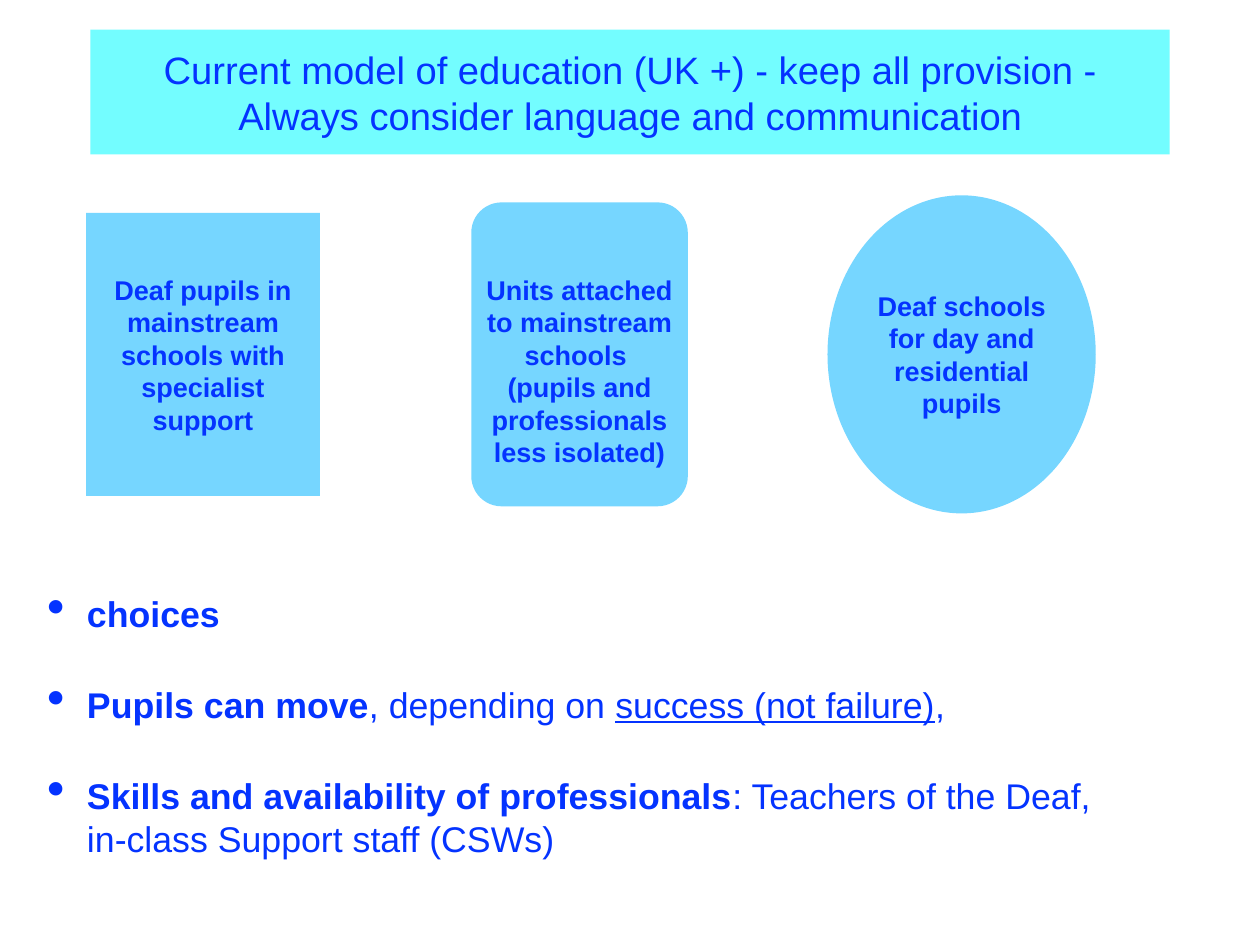
from lxml import etree
from pptx import Presentation
from pptx.dml.color import RGBColor
from pptx.enum.shapes import MSO_SHAPE as Shape
from pptx.enum.text import MSO_ANCHOR as Anchor, PP_ALIGN as Align
from pptx.oxml.ns import qn
from pptx.util import Pt

COLORS = {"text": "0433FF", "banner": "73FDFF", "school": "76D6FF"}
FONT = "Arial"
INSET = 4.3

TITLE = ["Current model of education (UK +) - keep all provision -",
         "Always consider language and communication"]

# Shape, left, width, height, extra space above the text, paragraphs
SCHOOLS = [
    (Shape.RECTANGLE, 70, 190, 230, 0,
     ["Deaf pupils in mainstream schools with specialist support"]),
    (Shape.ROUNDED_RECTANGLE, 383, 176, 247, 26.4,
     ["Units attached to mainstream schools ",
      "(pupils and professionals less isolated)"]),
    (Shape.OVAL, 672.5, 218, 258.5, 0,
     ["Deaf schools for day and residential pupils"]),
]
SCHOOL_MIDDLE = 288

# Each point is a list of (text, style)
POINTS = [
    [("choices", "bold")],
    [("Pupils can move", "bold"), (", depending on ", "plain"),
     ("success (not failure)", "underline"), (",", "plain")],
    [("Skills and availability of professionals", "bold"),
     (": Teachers of the Deaf, in-class Support staff (CSWs)", "plain")],
]
POINT_INDENT = 32.4


def color(name):
    return RGBColor.from_string(COLORS[name])


def set_frame(frame, extra_top=0):
    frame.word_wrap = True
    frame.vertical_anchor = Anchor.MIDDLE
    frame.margin_left = frame.margin_right = frame.margin_bottom = Pt(INSET)
    frame.margin_top = Pt(INSET + extra_top)


def add_para(frame, index, size, line, align, bold=None):
    para = frame.add_paragraph() if index else frame.paragraphs[0]
    para.alignment = align
    para.line_spacing = Pt(line)
    para.font.name = FONT
    para.font.size = Pt(size)
    para.font.bold = bold
    para.font.color.rgb = color("text")
    return para


def add_filled(slide, kind, bounds, fill, lines, size, line, bold, extra_top=0):
    box = slide.shapes.add_shape(kind, *map(Pt, bounds))
    box.shadow.inherit = False
    box.fill.solid()
    box.fill.fore_color.rgb = color(fill)
    box.line.fill.background()
    set_frame(box.text_frame, extra_top)
    for index, text in enumerate(lines):
        para = add_para(box.text_frame, index, size, line, Align.CENTER, bold)
        para.add_run().text = text
    return box


def add_bullet(para):
    props = para._p.get_or_add_pPr()
    props.set("marL", str(Pt(POINT_INDENT)))
    props.set("indent", str(-Pt(POINT_INDENT)))
    size = etree.Element(qn("a:buSzPct"), val="145000")
    mark = etree.Element(qn("a:buChar"), char="•")
    defaults = props.find(qn("a:defRPr"))
    for item in (size, mark):
        defaults.addprevious(item)


deck = Presentation()
deck.slide_width, deck.slide_height = Pt(1024), Pt(768)
slide = deck.slides.add_slide(deck.slide_layouts[6])

# Points at the bottom
body = slide.shapes.add_textbox(Pt(34), Pt(423), Pt(874), Pt(333))
set_frame(body.text_frame)
for index, spans in enumerate(POINTS):
    para = add_para(body.text_frame, index, 29, 35, Align.LEFT)
    para.space_before = Pt(39)
    add_bullet(para)
    for text, style in spans:
        span = para.add_run()
        span.text = text
        span.font.bold = style == "bold"
        span.font.underline = style == "underline"

# Kinds of school, centred on one line
for kind, left, width, height, extra_top, lines in SCHOOLS:
    bounds = (left, SCHOOL_MIDDLE - height / 2, width, height)
    box = add_filled(slide, kind, bounds, "school", lines, 22, 26.4, True, extra_top)
    if kind == Shape.ROUNDED_RECTANGLE:
        box.adjustments[0] = 0.14

# Title banner
add_filled(slide, Shape.RECTANGLE, (73.5, 24, 877, 101.5), "banner", TITLE, 31, 37.3, False)

deck.save("out.pptx")
